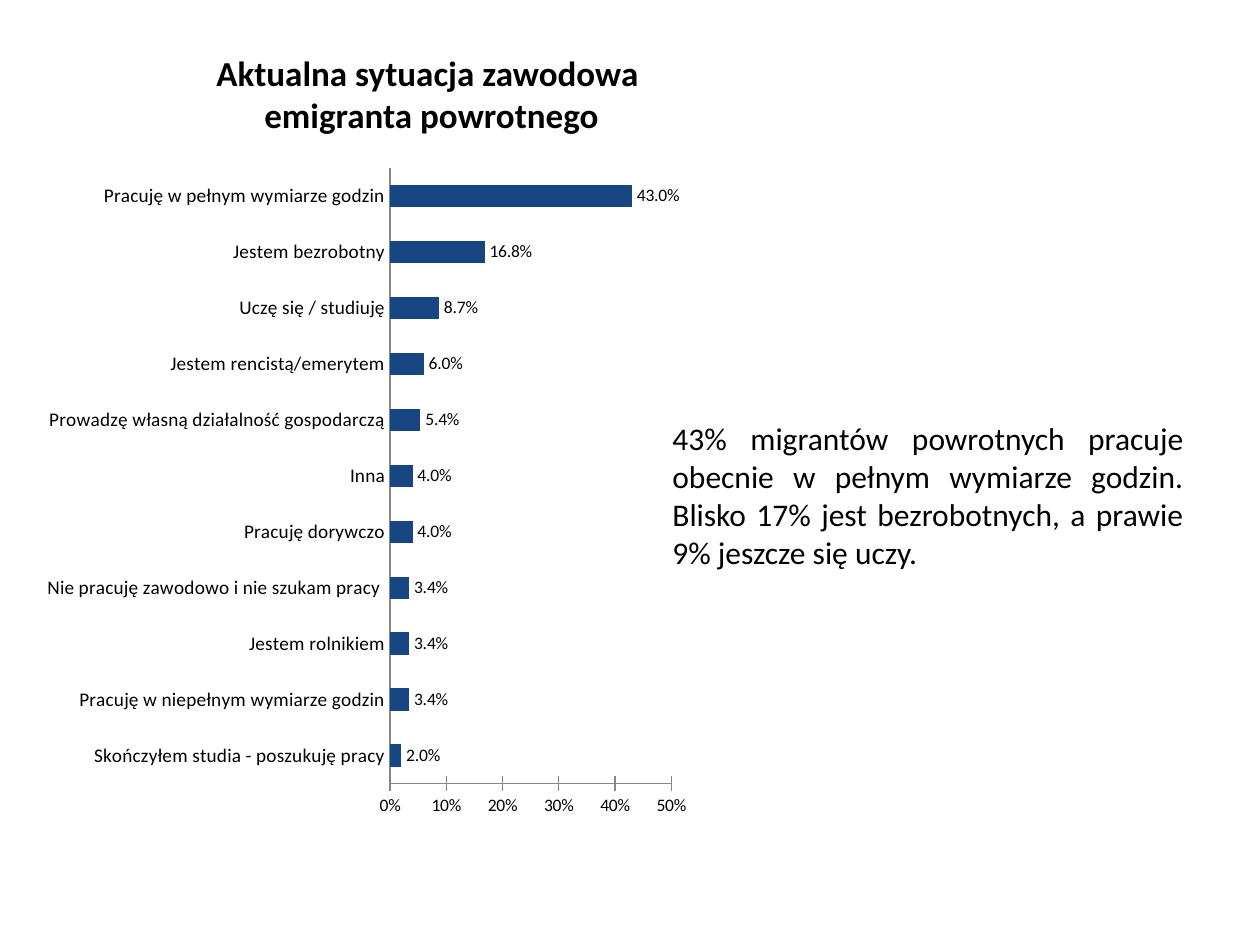
import pptx
import pptx.chart.data
import pptx.dml.color
import pptx.enum.chart
import pptx.enum.text
import pptx.oxml
import pptx.oxml.ns
import pptx.util

TITLE_LINES = ["Aktualna sytuacja zawodowa ", "emigranta powrotnego"]
COMMENT = (
    "43% migrantów powrotnych pracuje obecnie w pełnym wymiarze godzin. "
    "Blisko 17% jest bezrobotnych, a prawie 9% jeszcze się uczy."
)
SITUATIONS = [
    ("Skończyłem studia - poszukuję pracy", 0.02),
    ("Pracuję w niepełnym wymiarze godzin", 0.034),
    ("Jestem rolnikiem", 0.034),
    ("Nie pracuję zawodowo i nie szukam pracy ", 0.034),
    ("Pracuję dorywczo", 0.04),
    ("Inna", 0.04),
    ("Prowadzę własną działalność gospodarczą", 0.054),
    ("Jestem rencistą/emerytem", 0.06),
    ("Uczę się / studiuję", 0.087),
    ("Jestem bezrobotny", 0.168),
    ("Pracuję w pełnym wymiarze godzin", 0.43),
]

FONT = "Calibri"
BLACK = pptx.dml.color.RGBColor(0x00, 0x00, 0x00)
NAVY = pptx.dml.color.RGBColor(0x18, 0x46, 0x83)
GREY = pptx.dml.color.RGBColor(0x86, 0x86, 0x86)

PX = pptx.util.Inches(1) / 126
SLIDE_SIZE = (1260, 945)
TITLE_BOX = (74, 45, 715, 97)
COMMENT_BOX = (660, 413, 536, 165)
CHART_BOX = (35, 155, 665, 674)
PLOT_BOX = (390, 168, 281, 616)


def emu(lengths):
    return [round(length * PX) for length in lengths]


def format_font(font, size, bold=False):
    font.name = FONT
    font.size = pptx.util.Pt(size)
    font.bold = bold
    font.color.rgb = BLACK


def write_text(shape, lines, size, alignment, bold=False):
    frame = shape.text_frame
    frame.word_wrap = True
    frame.auto_size = pptx.enum.text.MSO_AUTO_SIZE.NONE
    frame.vertical_anchor = pptx.enum.text.MSO_ANCHOR.TOP
    paragraph = frame.paragraphs[0]
    paragraph.alignment = alignment
    for index, line in enumerate(lines):
        if index:
            paragraph.add_line_break()
        run = paragraph.add_run()
        run.text = line
        format_font(run.font, size, bold)


def place_plot(chart):
    left, top, width, height = CHART_BOX
    plot_left, plot_top, plot_width, plot_height = PLOT_BOX
    fractions = {
        "x": (plot_left - left) / width,
        "y": (plot_top - top) / height,
        "w": plot_width / width,
        "h": plot_height / height,
    }
    entries = [("layoutTarget", "inner"), ("xMode", "edge"), ("yMode", "edge")]
    entries += [(name, f"{value:.3f}") for name, value in fractions.items()]
    body = "".join(f'<c:{name} val="{value}"/>' for name, value in entries)
    layout = pptx.oxml.parse_xml(
        f'<c:layout {pptx.oxml.ns.nsdecls("c")}>'
        f"<c:manualLayout>{body}</c:manualLayout></c:layout>"
    )
    plot_area = chart._chartSpace.chart.plotArea
    for old_layout in plot_area.findall(pptx.oxml.ns.qn("c:layout")):
        plot_area.remove(old_layout)
    plot_area.insert(0, layout)


def format_axis(axis, size, tick_mark):
    axis.has_major_gridlines = False
    axis.major_tick_mark = tick_mark
    axis.minor_tick_mark = pptx.enum.chart.XL_TICK_MARK.NONE
    axis.format.line.color.rgb = GREY
    axis.format.line.width = pptx.util.Pt(0.75)
    format_font(axis.tick_labels.font, size)


def add_situation_chart(slide):
    data = pptx.chart.data.CategoryChartData(number_format="0.0%")
    data.categories = [name for name, share in SITUATIONS]
    data.add_series("Series 1", [share for name, share in SITUATIONS])
    chart = slide.shapes.add_chart(
        pptx.enum.chart.XL_CHART_TYPE.BAR_CLUSTERED, *emu(CHART_BOX), data
    ).chart
    chart.has_legend = False
    chart.has_title = False
    format_font(chart.font, 10)
    place_plot(chart)

    format_axis(chart.category_axis, 11, pptx.enum.chart.XL_TICK_MARK.NONE)
    value_axis = chart.value_axis
    format_axis(value_axis, 10, pptx.enum.chart.XL_TICK_MARK.CROSS)
    value_axis.minimum_scale = 0
    value_axis.maximum_scale = 0.5
    value_axis.major_unit = 0.1
    value_axis.tick_labels.number_format = "0%"
    value_axis.tick_labels.number_format_is_linked = False

    plot = chart.plots[0]
    plot.vary_by_categories = False
    plot.gap_width = 150
    plot.overlap = -25
    fill = plot.series[0].format.fill
    fill.solid()
    fill.fore_color.rgb = NAVY
    plot.has_data_labels = True
    labels = plot.data_labels
    labels.show_value = True
    labels.number_format = "0.0%"
    labels.number_format_is_linked = False
    labels.position = pptx.enum.chart.XL_LABEL_POSITION.OUTSIDE_END
    format_font(labels.font, 10)


def main():
    presentation = pptx.Presentation()
    presentation.slide_width, presentation.slide_height = emu(SLIDE_SIZE)
    slide = presentation.slides.add_slide(presentation.slide_layouts[5])

    title = slide.shapes.title
    title.left, title.top, title.width, title.height = emu(TITLE_BOX)
    write_text(title, TITLE_LINES, 20, pptx.enum.text.PP_ALIGN.CENTER, bold=True)

    comment = slide.shapes.add_textbox(*emu(COMMENT_BOX))
    write_text(comment, [COMMENT], 18, pptx.enum.text.PP_ALIGN.JUSTIFY)

    add_situation_chart(slide)
    presentation.save("out.pptx")


if __name__ == "__main__":
    main()
